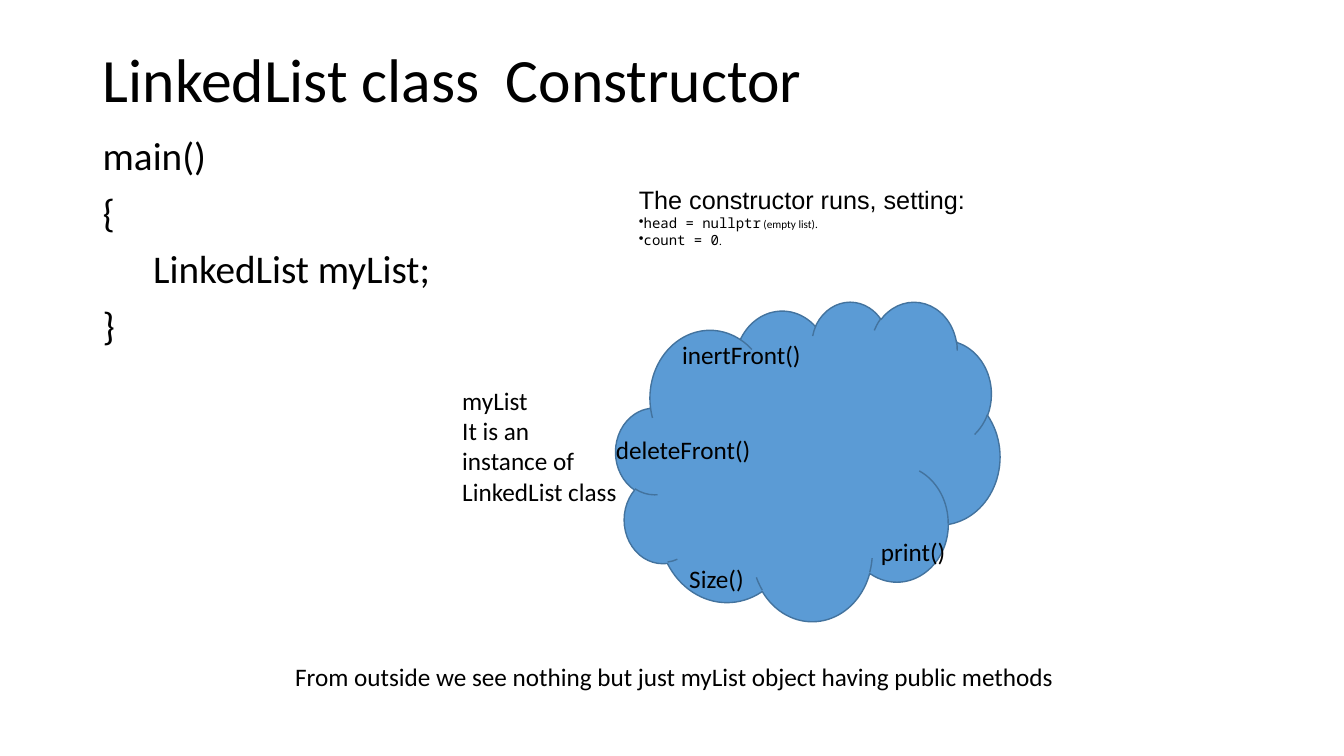
"""Build the slide on what the LinkedList constructor does."""
from dataclasses import dataclass

from lxml import etree
from pptx import Presentation
from pptx import util as u
from pptx.dml.color import RGBColor
from pptx.enum import shapes, text
from pptx.oxml import ns

BLACK, CLOUD_FILL, CLOUD_LINE = "000000", "5B9BD5", "43739E"


@dataclass(frozen=True)
class Span:
    words: str
    size: float = 18
    font: str = "Calibri"


@dataclass(frozen=True)
class Para:
    spans: tuple[Span, ...]
    bullet: bool = False
    spacing: float = 1.0
    before: float = 0


@dataclass(frozen=True)
class Box:
    left: float
    top: float
    width: float
    height: float
    paras: tuple[Para, ...]
    wrap: bool = False
    middle: bool = False


def lines(*words: str, size: float = 18, spacing: float = 1.0, before: float = 0) -> tuple[Para, ...]:
    return tuple(Para((Span(line, size),), False, spacing, before) for line in words)


def setting(code: str, remark: str) -> Para:
    return Para((Span(code, 10, "Noto Sans Mono"), Span(remark, 8)), bullet=True)


def color(value: str) -> RGBColor:
    return RGBColor.from_string(value)


def draw_box(page, box: Box) -> None:
    shape = page.shapes.add_textbox(u.Cm(box.left), u.Cm(box.top), u.Cm(box.width), u.Cm(box.height))
    frame = shape.text_frame
    frame.word_wrap = box.wrap
    frame.vertical_anchor = text.MSO_ANCHOR.MIDDLE if box.middle else text.MSO_ANCHOR.TOP
    for index, para in enumerate(box.paras):
        paragraph = frame.paragraphs[0] if index == 0 else frame.add_paragraph()
        paragraph.line_spacing = para.spacing
        paragraph.space_before = u.Pt(para.before)
        if para.bullet:
            properties = paragraph._p.get_or_add_pPr()
            etree.SubElement(properties, ns.qn("a:buChar")).set("char", "•")
        for span in para.spans:
            run = paragraph.add_run()
            run.text = span.words
            run.font.name = span.font
            run.font.size = u.Pt(span.size)
            run.font.color.rgb = color(BLACK)


def draw_cloud(page, left: float, top: float, width: float, height: float) -> None:
    cloud = page.shapes.add_shape(
        shapes.MSO_SHAPE.CLOUD, u.Cm(left), u.Cm(top), u.Cm(width), u.Cm(height))
    cloud.shadow.inherit = False
    cloud.fill.solid()
    cloud.fill.fore_color.rgb = color(CLOUD_FILL)
    cloud.line.color.rgb = color(CLOUD_LINE)
    cloud.line.width = u.Pt(1)


HEADINGS = (
    Box(2.34, 1.02, 29.21, 2.11, lines("LinkedList class\tConstructor", size=44, spacing=0.9),
        wrap=True, middle=True),
    Box(2.34, 3.33, 29.21, 13.82,
        lines("main()", "{", "\tLinkedList myList;", "}", size=28, spacing=0.9, before=10), wrap=True),
    Box(15.85, 4.52, 9.7, 2.64, (
        Para((Span("The constructor runs, setting:", font="Arial"),)),
        setting("head = nullptr", " (empty list)."),
        setting("count = 0", "."),
    ), wrap=True),
    Box(11.4, 9.58, 4.45, 3.33, lines("myList", "It is an", "instance of", "LinkedList class")),
)
LABELS = (
    Box(7.19, 16.54, 19.84, 1.8,
        lines("From outside we see nothing but just myList object having public methods")),
    Box(16.94, 8.43, 3.53, 1.02, lines("inertFront()")),
    Box(15.27, 10.82, 3.94, 1.02, lines("deleteFront()")),
    Box(17.12, 14.07, 1.91, 1.02, lines("Size()")),
    Box(21.95, 13.39, 2.16, 1.02, lines("print()")),
)


def main() -> None:
    deck = Presentation()
    deck.slide_width, deck.slide_height = u.Cm(33.87), u.Cm(19.05)
    page = deck.slides.add_slide(deck.slide_layouts[6])
    for box in HEADINGS:
        draw_box(page, box)
    draw_cloud(page, 15.52, 7.59, 9.68, 8.05)
    for box in LABELS:
        draw_box(page, box)
    deck.save("out.pptx")


if __name__ == "__main__":
    main()
